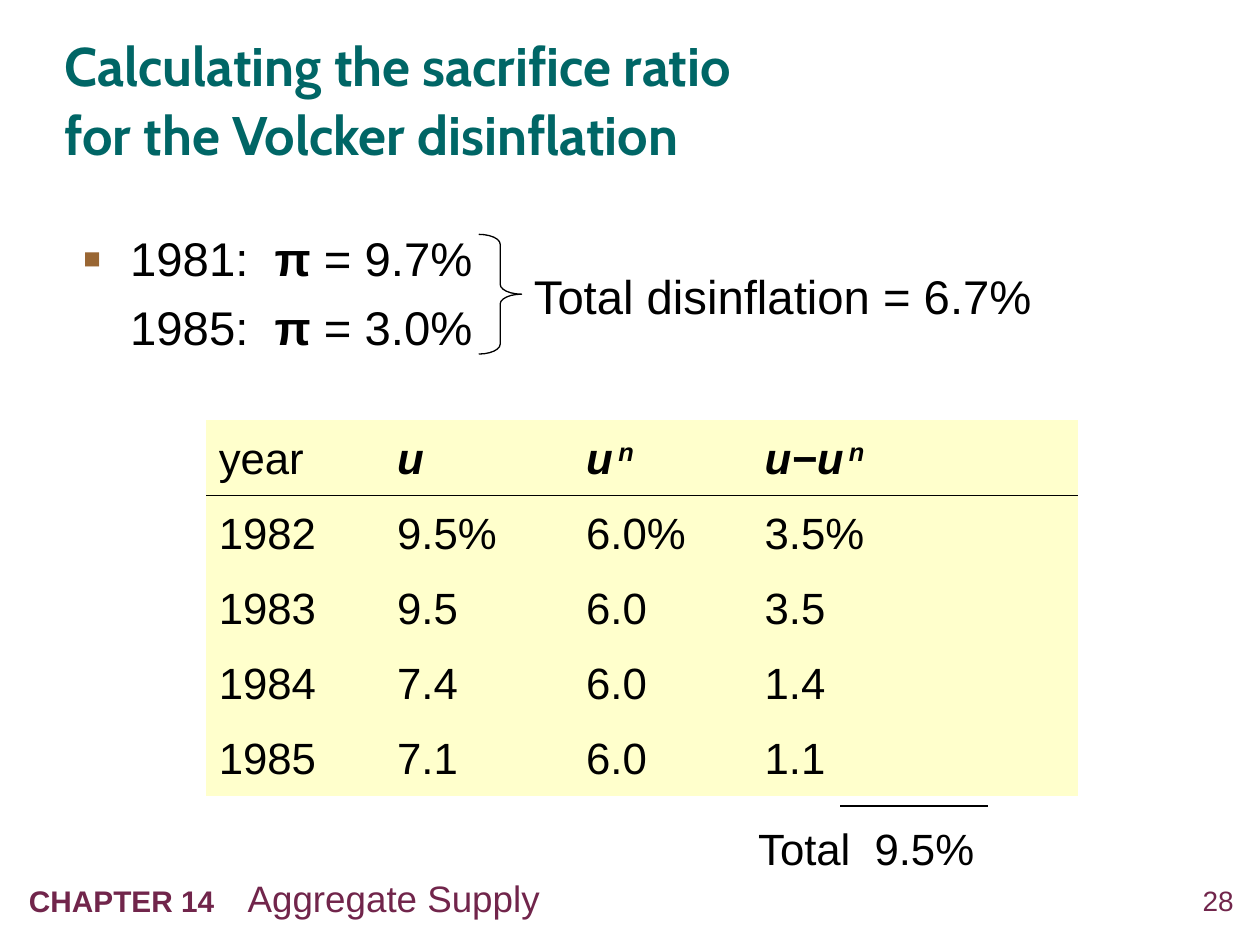
import lxml.etree
import pptx
import pptx.dml.color
import pptx.enum.shapes
import pptx.enum.text
import pptx.oxml.ns
import pptx.util

Pt = pptx.util.Pt
RGB = pptx.dml.color.RGBColor
ALIGN = pptx.enum.text.PP_ALIGN
ANCHOR = pptx.enum.text.MSO_ANCHOR
SHAPE = pptx.enum.shapes.MSO_SHAPE
LINE = pptx.enum.shapes.MSO_CONNECTOR

BLACK = RGB(0x00, 0x00, 0x00)
TEAL = RGB(0x00, 0x66, 0x66)
PLUM = RGB(0x71, 0x25, 0x4B)
BROWN = RGB(0x99, 0x66, 0x33)
CREAM = RGB(0xFF, 0xFF, 0xCC)
PLAIN = "{2D5ABB26-0587-4C30-8999-92F81FD0307C}"

VAR = {"bold": True, "italic": True}
POWER = [(" ", {**VAR, "size": 11}), ("n", {**VAR, "base": 30})]
ROWS = [
    ["year", [("u", VAR)], [("u", VAR), *POWER], [("u−u", VAR), *POWER]],
    ["1982", "9.5%", "6.0%", "3.5%"],
    ["1983", "9.5", "6.0", "3.5"],
    ["1984", "7.4", "6.0", "1.4"],
    ["1985", "7.1", "6.0", "1.1"],
]
COLS = [102, 108, 102, 186]


def node(parent, tag, **attrs):
    return lxml.etree.SubElement(parent, pptx.oxml.ns.qn(tag), attrs)


def write(para, text, size=25, font="Arial", color=BLACK, bold=False,
          italic=False, base=0, align=None, space=None, before=None):
    """Fill a paragraph from a string or from (text, format) pairs."""
    para.alignment = align
    para.line_spacing = space
    if before:
        para.space_before = Pt(before)
    common = dict(size=size, font=font, color=color, bold=bold,
                  italic=italic, base=base)
    for part, extra in [(text, {})] if isinstance(text, str) else text:
        look = {**common, **extra}
        for i, line in enumerate(part.split("\n")):
            if i:
                para.add_line_break()
            run = para.add_run()
            run.text = line
            run.font.size = Pt(look["size"])
            run.font.name = look["font"]
            run.font.color.rgb = look["color"]
            run.font.bold = look["bold"]
            run.font.italic = look["italic"]
            if look["base"]:
                run.font._element.set("baseline", str(look["base"] * 1000))


def box(slide, left, top, width, height, paras, inset=True,
        anchor=ANCHOR.TOP, **look):
    """Add a text box and return its paragraphs."""
    frame = slide.shapes.add_textbox(
        Pt(left), Pt(top), Pt(width), Pt(height)).text_frame
    frame.word_wrap = True
    frame.vertical_anchor = anchor
    if not inset:
        frame.margin_left = frame.margin_right = 0
        frame.margin_top = frame.margin_bottom = 0
    for i, text in enumerate(paras):
        para = frame.add_paragraph() if i else frame.paragraphs[0]
        write(para, text, **look)
    return frame.paragraphs


def indent(para, left, first=0):
    props = para._p.get_or_add_pPr()
    props.set("marL", str(Pt(left)))
    props.set("indent", str(Pt(first)))
    return props


def bullet(props):
    node(node(props, "a:buClr"), "a:srgbClr", val=str(BROWN))
    node(props, "a:buSzPct", val="120000")
    node(props, "a:buFont", typeface="Arial")
    node(props, "a:buChar", char="▪")


def tab(para, pos):
    tabs = node(para._p.get_or_add_pPr(), "a:tabLst")
    node(tabs, "a:tab", pos=str(Pt(pos)), algn="l")


def rule(cell):
    """Draw a line under a cell."""
    props = cell._tc.get_or_add_tcPr()
    edge = node(props, "a:lnB", w=str(Pt(1)))
    node(node(edge, "a:solidFill"), "a:srgbClr", val=str(BLACK))
    props.insert(0, edge)


def grid(slide, left, top, height):
    table = slide.shapes.add_table(
        len(ROWS), len(COLS), Pt(left), Pt(top), Pt(sum(COLS)),
        Pt(height)).table
    table.first_row = table.horz_banding = False
    style = table._tbl.tblPr.find(pptx.oxml.ns.qn("a:tableStyleId"))
    style.text = PLAIN
    for col, width in zip(table.columns, COLS):
        col.width = Pt(width)
    for r, row in enumerate(ROWS):
        for c, text in enumerate(row):
            cell = table.cell(r, c)
            cell.vertical_anchor = ANCHOR.MIDDLE
            cell.fill.solid()
            cell.fill.fore_color.rgb = CREAM
            write(cell.text_frame.paragraphs[0], text, space=1.05)
            if r == 0:
                rule(cell)


def stroke(item):
    item.line.color.rgb = BLACK
    item.line.width = Pt(0.75)


def line(slide, left, right, y):
    item = slide.shapes.add_connector(
        LINE.STRAIGHT, Pt(left), Pt(y), Pt(right), Pt(y))
    stroke(item)
    node(item._element.spPr, "a:effectLst")


def brace(slide, left, top, width, height):
    item = slide.shapes.add_shape(
        SHAPE.RIGHT_BRACE, Pt(left), Pt(top), Pt(width), Pt(height))
    item.adjustments[0] = 0.23
    item.shadow.inherit = False
    item.fill.background()
    stroke(item)


def footer(slide):
    box(slide, 665.3, 504.7, 39.6, 23, ["28"], inset=False, size=16,
        color=PLUM, align=ALIGN.RIGHT)
    name = [("CHAPTER 14\t", {"size": 17, "bold": True}),
            ("Aggregate Supply", {})]
    paras = box(slide, 9.4, 496.8, 589, 32.4, [name], size=21, color=PLUM)
    tab(paras[0], 125)


def rates(slide):
    pairs = [("1981", "9.7"), ("1985", "3.0")]
    texts = [[(f"{year}:  ", {}), ("π", {"bold": True}), (f" = {rate}%", {})]
             for year, rate in pairs]
    first, last = box(slide, 40.3, 126, 301, 82, texts, size=27,
                      space=1.05, before=5.4)
    bullet(indent(first, 27, -27))
    indent(last, 27)


def main():
    deck = pptx.Presentation()
    deck.slide_width, deck.slide_height = Pt(720), Pt(540)
    slide = deck.slides.add_slide(deck.slide_layouts[6])
    footer(slide)
    box(slide, 36.7, 18.7, 649.4, 74.2,
        ["Calculating the sacrifice ratio \nfor the Volcker disinflation"],
        inset=False, anchor=ANCHOR.MIDDLE, size=31, font="Cabin",
        color=TEAL, bold=True, space=1.05)
    rates(slide)
    grid(slide, 117.8, 240.2, 214.8)
    box(slide, 426.2, 465.8, 156.2, 37.4, ["Total  9.5%"])
    line(slide, 480.2, 564.5, 460.6)
    box(slide, 298, 149, 311.8, 39.6, ["Total disinflation = 6.7%"], size=27)
    brace(slide, 273.6, 133.9, 24.5, 68.4)
    deck.save("out.pptx")


if __name__ == "__main__":
    main()
